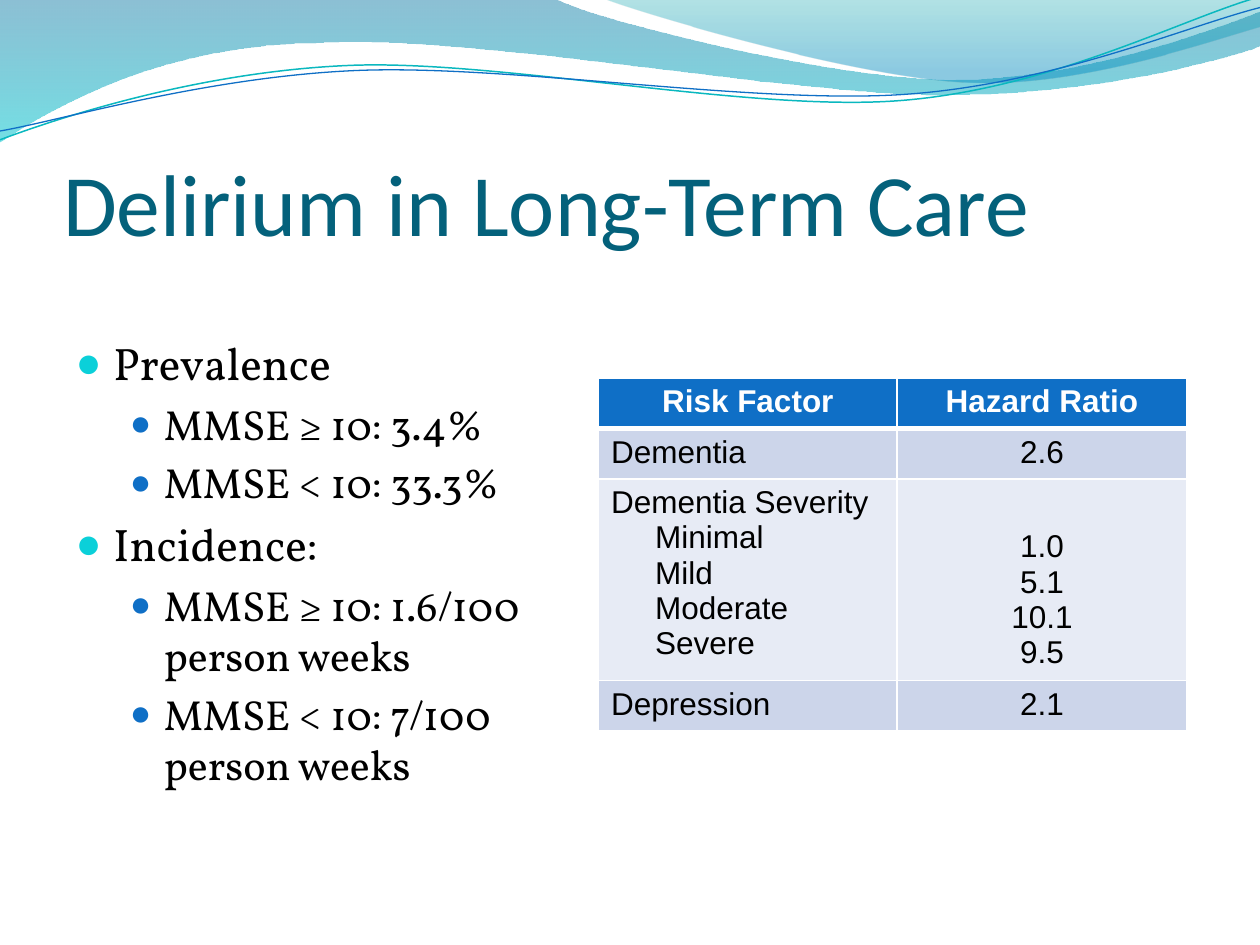
from lxml.etree import SubElement
from pptx import Presentation
from pptx.dml.color import RGBColor
from pptx.enum.text import MSO_ANCHOR, MSO_AUTO_SIZE, PP_ALIGN
from pptx.oxml.ns import qn
from pptx.util import Inches, Pt

COLORS = {
    "title": "04617B", "text": "000000", "white": "FFFFFF",
    "cyan": "0BD0D9", "blue": "0F6FC6", "teal": "0AB8BF",
    "band": "CCD5EA", "light": "E7EBF5",
    "deep": "0074A1", "aqua": "00C6CF", "sea": "00A1A9", "sky": "008BBF",
}
RGB = {name: RGBColor.from_string(value) for name, value in COLORS.items()}


def add_wave(shapes, path):
    """Add a freeform; 2 numbers in path are a line end, 6 a Bezier curve."""
    points = [(round(seg[i] * 1000), round(seg[i + 1] * 1000))
              for seg in path for i in range(0, len(seg), 2)]
    builder = shapes.build_freeform(*points[0], scale=Inches(1) / 1000)
    builder.add_line_segments(points[1:], close=points[-1] == points[0])
    sp = builder.convert_to_shape()
    sp.shadow.inherit = False
    lines = iter(list(sp._element.iter(qn("a:lnTo"))))
    for seg in path[1:]:
        curve = next(lines)
        if len(seg) == 6:  # the next two points join this one in a curve
            curve.tag = qn("a:cubicBezTo")
            for _ in range(2):
                line = next(lines)
                curve.append(line[0])
                line.getparent().remove(line)
    return sp


def add_run(p, text, size, font, color, bold=False):
    r = p.add_run()
    r.text = text
    r.font.size, r.font.name, r.font.bold = Pt(size), font, bold
    r.font.color.rgb = RGB[color]


prs = Presentation()
prs.slide_width, prs.slide_height = Inches(10), Inches(7.5)
s = prs.slides.add_slide(prs.slide_layouts[1])
title, body = s.placeholders

# Waves along the top edge
bands = [
    ([(0, -0.01), (4.4, -0.01), (4.76, 0.17, 6.64, 0.63, 7.58, 0.63),
      (8.53, 0.63, 9.58, 0.26, 10, 0.09), (10.01, 0.36),
      (9.83, 0.44, 8.7, 0.76, 7.46, 0.75), (6.22, 0.75, 3.82, 0.28, 2.57, 0.34),
      (1.29, 0.35, 0.46, 0.83, -0.01, 1.13), (0, -0.01)],
     [(0, "deep", 45), (1, "aqua", 55)]),
    ([(4.79, -0.01), (5.09, 0.11, 6.82, 0.62, 7.69, 0.65),
      (8.56, 0.69, 9.61, 0.32, 10, 0.21), (10, 0), (4.79, -0.01)],
     [(0, "sea", 30), (0.8, "sky", 45)]),
]
waves = []
for path, stops in bands:
    sp = add_wave(s.shapes, path)
    sp.line.fill.background()
    sp.fill.gradient()
    sp.fill.gradient_angle = 270
    for stop, (position, color, _) in zip(sp.fill.gradient_stops, stops):
        stop.position = position
        stop.color.rgb = RGB[color]
    for clr, (_, _, alpha) in zip(sp._element.spPr.iter(qn("a:srgbClr")), stops):
        SubElement(clr, qn("a:alpha"), val=str(alpha * 1000))
    waves.append(sp)

strands = [
    ([(0, 1.11), (0.48, 0.93, 1.58, 0.57, 2.77, 0.52),
      (3.95, 0.47, 5.93, 0.89, 7.13, 0.8), (8.33, 0.71, 9.38, 0.15, 9.98, -0.02)],
     "teal", 0.85),
    ([(0, 1.04), (0.47, 0.96, 1.64, 0.61, 2.83, 0.56),
      (4.03, 0.51, 5.97, 0.83, 7.17, 0.75), (8.36, 0.67, 9.41, 0.21, 10, 0.06)],
     "blue", 0.75),
]
for path, color, width in strands:
    sp = add_wave(s.shapes, path)
    sp.fill.background()
    sp.line.color.rgb = RGB[color]
    sp.line.width = Pt(width)
    waves.append(sp)
for sp in waves:  # behind the placeholders
    title._element.addprevious(sp._element)

# Title
title.left, title.top = Inches(0.5), Inches(0.77)
title.width, title.height = Inches(9), Inches(1.25)
tf = title.text_frame
tf.auto_size = MSO_AUTO_SIZE.NONE
tf.vertical_anchor = MSO_ANCHOR.BOTTOM
tf.margin_left = tf.margin_right = tf.margin_bottom = 0
p = tf.paragraphs[0]
p.alignment = PP_ALIGN.LEFT
add_run(p, "Delirium in Long-Term Care", 50, "Calibri", "title")

# Bullet list
body.left, body.top = Inches(0.5), Inches(2.1)
body.width, body.height = Inches(4.42), Inches(4.85)
tf = body.text_frame
tf.auto_size = MSO_AUTO_SIZE.NONE
tf.margin_top = Inches(0.56)
levels = [  # size, left margin, hanging indent, bullet colour, bullet percent
    (26, 0.3, 0.3, "cyan", 95),
    (24, 0.7, 0.27, "blue", 85),
]
items = [
    (0, "Prevalence"), (1, "MMSE ≥ 10: 3.4%"), (1, "MMSE < 10: 33.3%"),
    (0, "Incidence:"), (1, "MMSE ≥ 10: 1.6/100 person weeks"),
    (1, "MMSE < 10: 7/100 person weeks"),
]
for i, (level, text) in enumerate(items):
    size, margin, hang, color, percent = levels[level]
    p = tf.add_paragraph() if i else tf.paragraphs[0]
    p.level = level
    p.space_before = Pt(0.2 * size if i else 0)
    pPr = p._p.get_or_add_pPr()
    pPr.set("marL", str(Inches(margin)))
    pPr.set("indent", str(-Inches(hang)))
    SubElement(SubElement(pPr, qn("a:buClr")), qn("a:srgbClr"), val=COLORS[color])
    SubElement(pPr, qn("a:buSzPct"), val=str(percent * 1000))
    SubElement(pPr, qn("a:buFont"), typeface="Arial")
    SubElement(pPr, qn("a:buChar"), char="●")
    add_run(p, text, size, "Vollkorn", "text")

# Hazard ratio table
rows = [
    (0.4, "blue", ["Risk Factor"], ["Hazard Ratio"]),
    (0.4, "band", ["Dementia"], ["2.6"]),
    (1.6, "light", ["Dementia Severity", "Minimal", "Mild", "Moderate", "Severe"],
     ["1.0", "5.1", "10.1", "9.5"]),
    (0.4, "band", ["Depression"], ["2.1"]),
]
table = s.shapes.add_table(len(rows), 2, Inches(4.75), Inches(3),
                           Inches(4.67), Inches(2.8)).table
for column, width in zip(table.columns, (2.37, 2.3)):
    column.width = Inches(width)
for i, (height, fill, *texts) in enumerate(rows):
    table.rows[i].height = Inches(height)
    header = i == 0
    for j, lines in enumerate(texts):
        cell = table.cell(i, j)
        tcPr = cell._tc.get_or_add_tcPr()
        for side in "LRTB":
            thick = (header and side == "B") or (i == 1 and side == "T")
            ln = SubElement(tcPr, qn(f"a:ln{side}"), w=str(Pt(3 if thick else 1)))
            SubElement(SubElement(ln, qn("a:solidFill")), qn("a:srgbClr"),
                       val=COLORS["white"])
        cell.fill.solid()
        cell.fill.fore_color.rgb = RGB[fill]
        if len(lines) == 4:  # ratios start beside the first severity grade
            cell.margin_top = Inches(0.4)
        for n, text in enumerate(lines):
            p = cell.text_frame.add_paragraph() if n else cell.text_frame.paragraphs[0]
            p.alignment = PP_ALIGN.CENTER if header or j else PP_ALIGN.LEFT
            if n and j == 0:
                p._p.get_or_add_pPr().set("marL", str(Inches(0.35)))
            add_run(p, text, 18, "Arial", "white" if header else "text", header)

prs.save("out.pptx")
